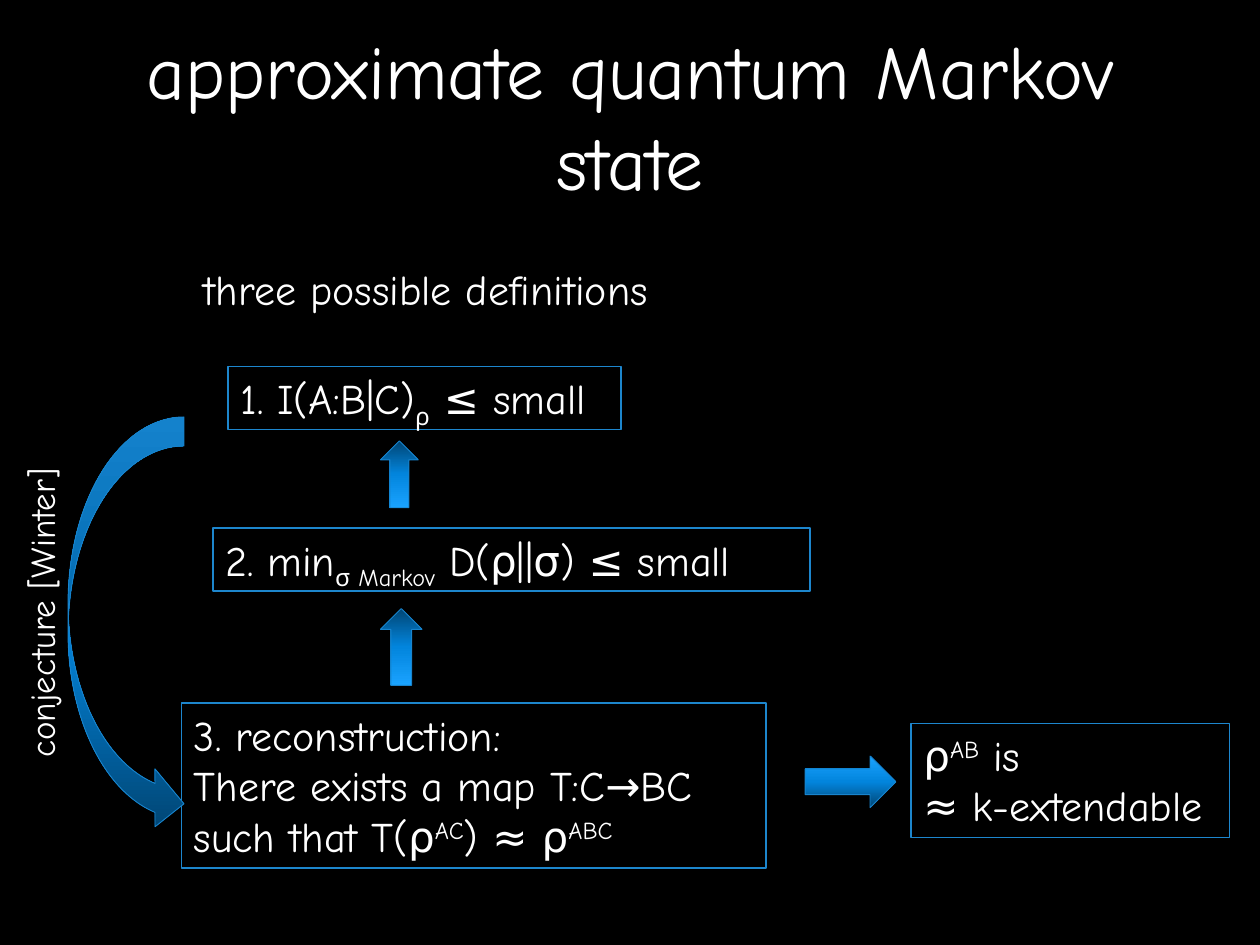
from lxml import etree
from pptx import Presentation
from pptx.dml.color import RGBColor
from pptx.enum.shapes import MSO_SHAPE
from pptx.enum.text import MSO_ANCHOR, PP_ALIGN
from pptx.oxml.ns import qn
from pptx.util import Inches, Pt

RECT = MSO_SHAPE.RECTANGLE
UP, RIGHT = MSO_SHAPE.UP_ARROW, MSO_SHAPE.RIGHT_ARROW
CURVED = MSO_SHAPE.CURVED_RIGHT_ARROW
CENTER, MIDDLE = PP_ALIGN.CENTER, MSO_ANCHOR.MIDDLE

FONT = "Comic Neue"
WHITE, BLACK = "FFFFFF", "000000"
BOX_LINE, ARROW_LINE = "1D86CD", "1884CD"
GRADIENT = [(0, "014573"), (50, "0285DD"), (100, "1AA3FF")]
SUB, SUPER = -25, 30


def color(hex_value):
    return RGBColor.from_string(hex_value)


def write(shape, parts, size=24):
    """Fill a shape with (text, baseline percent) parts; a newline breaks the line."""
    tf = shape.text_frame
    tf.word_wrap = True
    tf.vertical_anchor = MSO_ANCHOR.TOP
    p = tf.paragraphs[0]
    p.alignment = PP_ALIGN.LEFT
    for text, baseline in parts:
        for i, line in enumerate(text.split("\n")):
            if i:
                p.add_line_break()
            r = p.add_run()
            r.text = line
            r.font.name = FONT
            r.font.size = Pt(size)
            r.font.color.rgb = color(WHITE)
            if baseline:
                r.font._element.set("baseline", str(baseline * 1000))
    return tf


def add_label(s, box, text, size=24):
    sp = s.shapes.add_textbox(*map(Inches, box))
    write(sp, [(text, 0)], size)
    return sp


def add_title(s, box, text):
    tf = add_label(s, box, text, 43.2).text_frame
    tf.vertical_anchor = MIDDLE
    tf.paragraphs[0].alignment = CENTER


def add_outlined(s, box, parts):
    sp = s.shapes.add_shape(RECT, *map(Inches, box))
    sp.shadow.inherit = False
    sp.fill.background()
    sp.line.color.rgb = color(BOX_LINE)
    sp.line.width = Pt(0.75)
    write(sp, parts)


def add_arrow(s, kind, box, angle=90):
    """Draw a block arrow whose gradient runs from dark to light along angle."""
    sp = s.shapes.add_shape(kind, *map(Inches, box))
    sp.shadow.inherit = False
    sp.fill.gradient()
    sp.fill.gradient_angle = angle
    stops = next(sp._element.iter(qn("a:gsLst")))
    for stop in list(stops):
        stops.remove(stop)
    for percent, hex_value in GRADIENT:
        gs = etree.SubElement(stops, qn("a:gs"), pos=str(percent * 1000))
        etree.SubElement(gs, qn("a:srgbClr"), val=hex_value)
    sp.line.color.rgb = color(ARROW_LINE)
    sp.line.width = Pt(0.5)


def add_definitions(s, left, top):
    """Stack the three definitions, joined by upward implication arrows."""
    add_outlined(s, (left + 0.37, top, 3.12, 0.5),
                 [("1. I(A:B|C)", 0), ("ρ", SUB), (" ≤ small", 0)])
    add_outlined(s, (left + 0.25, top + 1.28, 4.74, 0.5),
                 [("2. min", 0), ("σ Markov", SUB), (" D(ρ||σ) ≤ small", 0)])
    add_outlined(s, (left, top + 2.67, 4.64, 1.31),
                 [("3. reconstruction:\nThere exists a map T:C→BC such that T(ρ", 0),
                  ("AC", SUPER), (") ≈ ρ", 0), ("ABC", SUPER)])
    add_arrow(s, UP, (left + 1.58, top + 0.59, 0.3, 0.53), 270)
    add_arrow(s, UP, (left + 1.58, top + 1.92, 0.33, 0.61), 270)


def add_consequence(s, left, top):
    add_arrow(s, RIGHT, (left, top + 0.26, 0.72, 0.41))
    add_outlined(s, (left + 0.84, top, 2.53, 0.91),
                 [("ρ", 0), ("AB", SUPER), (" is \n≈ k-extendable", 0)])


def add_conjecture(s, left, top):
    label = add_label(s, (left - 1.56, top + 1.23, 2.7, 0.44), "conjecture [Winter]", 20)
    label.rotation = 270
    add_arrow(s, CURVED, (left, top, 0.92, 3.3))


def main():
    prs = Presentation()
    prs.slide_width, prs.slide_height = Inches(10), Inches(7.5)
    s = prs.slides.add_slide(prs.slide_layouts[6])
    s.background.fill.solid()
    s.background.fill.fore_color.rgb = color(BLACK)
    add_title(s, (0.75, 0.13, 8.5, 1.56), "approximate quantum Markov state")
    add_label(s, (1.52, 2.04, 3.97, 0.5), "three possible definitions")
    add_definitions(s, 1.44, 2.91)
    add_consequence(s, 6.39, 5.74)
    add_conjecture(s, 0.54, 3.31)
    prs.save("out.pptx")


if __name__ == "__main__":
    main()
